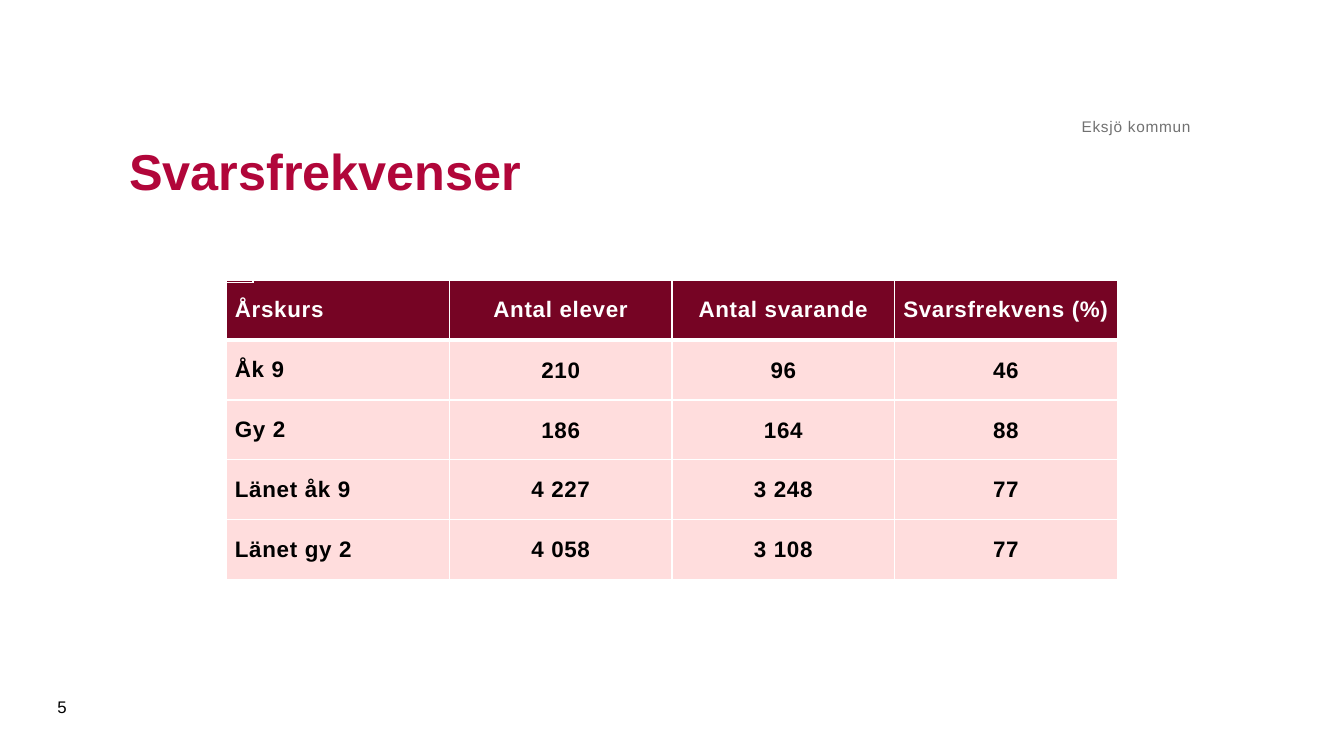
from lxml.etree import SubElement
from pptx import Presentation
from pptx.dml.color import RGBColor
from pptx.enum.text import MSO_ANCHOR, PP_ALIGN
from pptx.oxml.ns import qn
from pptx.util import Inches, Pt

COLORS = {
    "title": "B1063A",
    "header": "760424",
    "body": "FFDDDD",
    "white": "FFFFFF",
    "black": "000000",
    "grey": "717171",
}
FONT = "Arial"
RESPONSE_RATES = [
    ["Årskurs", "Antal elever", "Antal svarande", "Svarsfrekvens (%)"],
    ["Åk 9", "210", "96", "46"],
    ["Gy 2", "186", "164", "88"],
    ["Länet åk 9", "4 227", "3 248", "77"],
    ["Länet gy 2", "4 058", "3 108", "77"],
]


def write_text(frame, text, size, color, bold=False, align=PP_ALIGN.LEFT, spacing=0):
    """Fill a text frame with one paragraph; spacing is in points."""
    paragraph = frame.paragraphs[0]
    paragraph.alignment = align
    run = paragraph.add_run()
    run.text = text
    if spacing:
        run._r.get_or_add_rPr().set("spc", str(int(spacing * 100)))
    font = paragraph.font
    font.name, font.size, font.bold = FONT, Pt(size), bold
    font.color.rgb = RGBColor.from_string(COLORS[color])


def add_title(slide, text):
    title = slide.shapes.title
    title.left, title.top = Inches(1.18), Inches(0.98)
    title.width, title.height = Inches(10.24), Inches(1.42)
    title.text_frame.vertical_anchor = MSO_ANCHOR.MIDDLE
    write_text(title.text_frame, text, 36, "title", bold=True)


def add_label(slide, box, text, size, color, anchor, margin, **style):
    label = slide.shapes.add_textbox(*[Inches(length) for length in box])
    frame = label.text_frame
    frame.word_wrap = True
    frame.vertical_anchor = anchor
    frame.margin_left = frame.margin_right = Inches(margin)
    frame.margin_top = frame.margin_bottom = Inches(margin / 2)
    write_text(frame, text, size, color, **style)


def add_grid(slide, box, row_count, column_count):
    lengths = [Inches(length) for length in box]
    return slide.shapes.add_table(row_count, column_count, *lengths).table


def set_borders(cell, top, bottom):
    """Draw white cell borders, with top and bottom widths in points."""
    properties = cell._tc.get_or_add_tcPr()
    for side, width in (("L", 1), ("R", 1), ("T", top), ("B", bottom)):
        line = SubElement(properties, qn(f"a:ln{side}"), w=str(Pt(width)))
        fill = SubElement(line, qn("a:solidFill"))
        SubElement(fill, qn("a:srgbClr"), val=COLORS["white"])


def format_cell(cell, text, row, column):
    is_header = row == 0
    set_borders(cell, top=3 if row == 1 else 1, bottom=3 if is_header else 1)
    cell.fill.solid()
    cell.fill.fore_color.rgb = RGBColor.from_string(COLORS["header" if is_header else "body"])
    cell.vertical_anchor = MSO_ANCHOR.MIDDLE
    # Figures for the municipality sit in cells with narrow margins
    narrow = row in (1, 2) and column > 0
    cell.margin_left = cell.margin_right = Inches(0.01 if narrow else 0.08)
    cell.margin_top = Inches(0.04 if is_header else 0.01 if narrow else 0)
    cell.margin_bottom = Inches(0.04 if is_header else 0)
    write_text(cell.text_frame, text, 16, "white" if is_header else "black", bold=True,
               align=PP_ALIGN.CENTER if column else PP_ALIGN.JUSTIFY, spacing=0.5)


def add_rate_table(slide, rows):
    table = add_grid(slide, (2.25, 2.78, 8.83, 2.97), len(rows), len(rows[0]))
    for row, texts in enumerate(rows):
        for column, text in enumerate(texts):
            format_cell(table.cell(row, column), text, row, column)


def add_blank_table(slide):
    table = add_grid(slide, (0.79, 2.4, 1.72, 0.38), 1, 1)
    table.first_row = table.horz_banding = False
    table.cell(0, 0).fill.background()


def main():
    presentation = Presentation()
    presentation.slide_width, presentation.slide_height = Inches(13.33), Inches(7.5)
    slide = presentation.slides.add_slide(presentation.slide_layouts[5])

    # Heading and page number
    add_title(slide, "Svarsfrekvenser")
    add_label(slide, (0.47, 6.81, 0.57, 0.4), "5", 12, "black", MSO_ANCHOR.MIDDLE, 0.1)

    # Response rates
    add_rate_table(slide, RESPONSE_RATES)

    # Municipality, with the unfilled table under the heading
    add_label(slide, (1.57, 0.62, 10.24, 0.73), "Eksjö kommun", 11, "grey",
              MSO_ANCHOR.BOTTOM, 0, align=PP_ALIGN.RIGHT, spacing=0.5)
    add_blank_table(slide)

    presentation.save("out.pptx")


if __name__ == "__main__":
    main()
